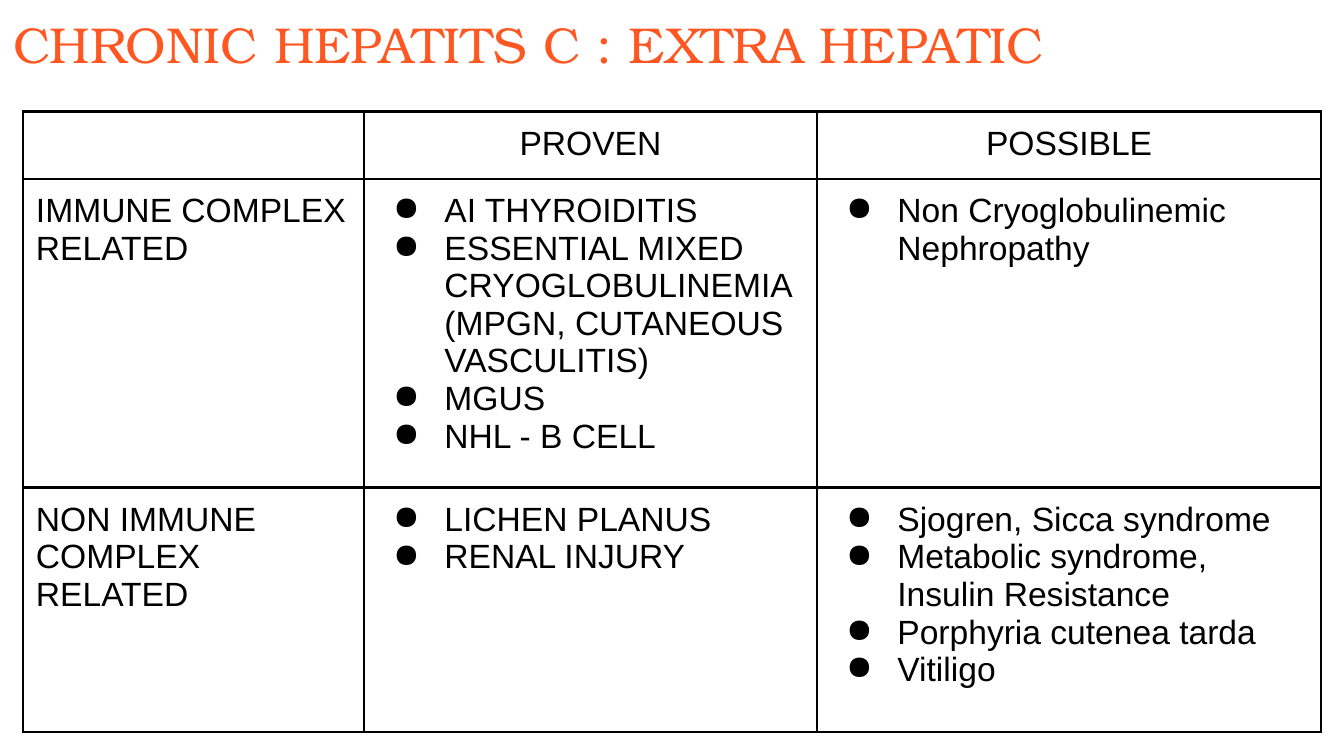
from lxml.etree import SubElement
from pptx import Presentation
from pptx.dml.color import RGBColor
from pptx.enum.text import MSO_ANCHOR, PP_ALIGN
from pptx.oxml.ns import qn
from pptx.util import Cm, Pt

INK = "000000"
INSET = Cm(0.25)
INSETS = {f"margin_{side}": INSET for side in ("left", "top", "right", "bottom")}
FRAME_FORMAT = {"word_wrap": True, "vertical_anchor": MSO_ANCHOR.TOP, **INSETS}
TABLE_FORMAT = {"first_row": False, "horz_banding": False}
CELL_FORMAT = {"vertical_anchor": MSO_ANCHOR.TOP, **INSETS}

COLUMN_WIDTHS = [6.45, 8.56, 9.53]
ROW_HEIGHTS = [1.27, 4.62, 4.62]
MANIFESTATIONS = [
    [[], ["PROVEN"], ["POSSIBLE"]],
    [
        ["IMMUNE COMPLEX RELATED"],
        [
            "AI THYROIDITIS",
            "ESSENTIAL MIXED CRYOGLOBULINEMIA (MPGN, CUTANEOUS VASCULITIS)",
            "MGUS",
            "NHL - B CELL",
        ],
        ["Non Cryoglobulinemic Nephropathy"],
    ],
    [
        ["NON IMMUNE COMPLEX RELATED"],
        ["LICHEN PLANUS", "RENAL INJURY"],
        [
            "Sjogren, Sicca syndrome",
            "Metabolic syndrome, Insulin Resistance",
            "Porphyria cutenea tarda",
            "Vitiligo",
        ],
    ],
]


def set_font(paragraph, name, size, color):
    for key, value in {"name": name, "size": Pt(size)}.items():
        setattr(paragraph.font, key, value)
    paragraph.font.color.rgb = RGBColor.from_string(color)


def add_solid(parent, tag, color):
    """Append a colour-holding element such as a:solidFill or a:buClr."""
    SubElement(SubElement(parent, qn(tag)), qn("a:srgbClr"), val=color)


deck = Presentation()
deck.slide_width, deck.slide_height = Cm(25.4), Cm(14.29)
slide = deck.slides.add_slide(deck.slide_layouts[6])

# Title
title = slide.shapes.add_textbox(0, 0, Cm(23.67), Cm(1.55)).text_frame
for key, value in FRAME_FORMAT.items():
    setattr(title, key, value)
title.text = "CHRONIC HEPATITS C : EXTRA HEPATIC"
set_font(title.paragraphs[0], "TeX Gyre Bonum", 27, "FF5722")

# Table of manifestations
grid = slide.shapes.add_table(
    len(ROW_HEIGHTS), len(COLUMN_WIDTHS), Cm(0.43), Cm(2.11),
    Cm(sum(COLUMN_WIDTHS)), Cm(sum(ROW_HEIGHTS)),
).table
for key, value in TABLE_FORMAT.items():
    setattr(grid, key, value)
for column, width in zip(grid.columns, COLUMN_WIDTHS):
    column.width = Cm(width)
for row, height in zip(grid.rows, ROW_HEIGHTS):
    row.height = Cm(height)

for r, entries in enumerate(MANIFESTATIONS):
    for c, lines in enumerate(entries):
        cell = grid.cell(r, c)
        for key, value in CELL_FORMAT.items():
            setattr(cell, key, value)

        # Borders come before the fill in the cell properties
        properties = cell._tc.get_or_add_tcPr()
        for edge in ("a:lnL", "a:lnR", "a:lnT", "a:lnB"):
            border = SubElement(properties, qn(edge), w=str(Pt(1.5)))
            add_solid(border, "a:solidFill", INK)
        cell.fill.background()

        cell.text = "\n".join(lines)
        for paragraph in cell.text_frame.paragraphs:
            set_font(paragraph, "Arial", 18, INK)
            if r == 0:
                paragraph.alignment = PP_ALIGN.CENTER
            elif c > 0:
                layout = paragraph._p.get_or_add_pPr()
                layout.set("marL", str(Cm(1.27)))
                layout.set("indent", str(-Cm(0.97)))
                # Bullet markup precedes the default run properties
                run_defaults = layout.find(qn("a:defRPr"))
                layout.remove(run_defaults)
                add_solid(layout, "a:buClr", INK)
                SubElement(layout, qn("a:buChar"), char="●")
                layout.append(run_defaults)

deck.save("out.pptx")
